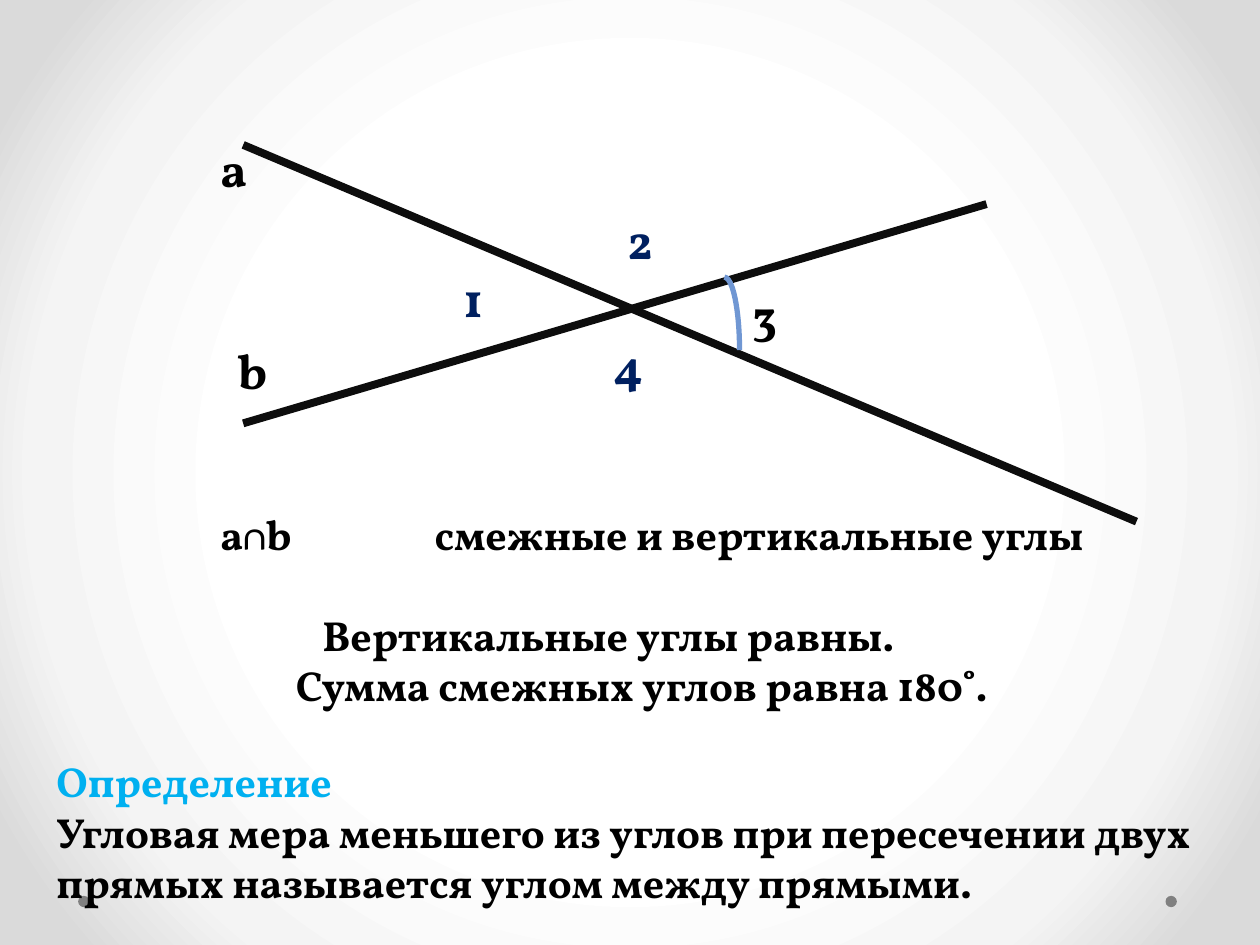
from dataclasses import dataclass

from lxml import etree
from pptx import Presentation
from pptx.dml.color import RGBColor
from pptx.enum import shapes, text
from pptx.oxml import parse_xml
from pptx.oxml.ns import nsdecls, qn
from pptx.util import Emu, Inches, Pt

FONT = "Vollkorn"
BLACK, NAVY, SKY, GRAY = "000000", "002060", "00B0F0", "808080"
BACKGROUND_STOPS = [(50, "FFFFFF"), (76, "F4F4F4"), (92, "DADADA")]


@dataclass
class Label:
    wording: str
    left: float
    top: float
    width: float
    color: str = BLACK


@dataclass
class Line:
    wording: str
    color: str = BLACK
    indent: float = 0
    before: float = 0
    tab: float = 0


def rgb(color: str) -> RGBColor:
    return RGBColor.from_string(color)


def paint_background(slide) -> None:
    stops = "".join(
        f'<a:gs pos="{pos * 1000}"><a:srgbClr val="{color}"/></a:gs>'
        for pos, color in BACKGROUND_STOPS
    )
    gradient = parse_xml(
        f'<a:gradFill {nsdecls("a")} rotWithShape="1"><a:gsLst>{stops}</a:gsLst>'
        '<a:path path="circle"><a:fillToRect l="50000" t="50000" r="50000" b="50000"/>'
        "</a:path></a:gradFill>"
    )
    slide.background.fill.solid()
    solid = next(slide.element.iter(qn("a:solidFill")))
    solid.getparent().replace(solid, gradient)


def add_dot(slide, left: float) -> None:
    dot = slide.shapes.add_shape(
        shapes.MSO_SHAPE.OVAL, Inches(left), Inches(7.11), Inches(0.09), Inches(0.09))
    dot.shadow.inherit = False
    dot.fill.solid()
    dot.fill.fore_color.rgb = rgb(GRAY)
    dot.line.fill.background()


def add_straight(slide, start: tuple[float, float], end: tuple[float, float]) -> None:
    straight = slide.shapes.add_connector(
        shapes.MSO_CONNECTOR.STRAIGHT, *map(Inches, start + end))
    straight.line.color.rgb = rgb("0D0D0D")
    straight.line.width = Pt(4.5)
    etree.SubElement(straight.element.spPr, qn("a:effectLst"))


def add_text(slide, box: tuple[float, float, float, float],
             lines: list[Line], size: float) -> None:
    frame = slide.shapes.add_textbox(*map(Inches, box)).text_frame
    frame.word_wrap = True
    frame.auto_size = text.MSO_AUTO_SIZE.SHAPE_TO_FIT_TEXT
    for index, line in enumerate(lines):
        paragraph = frame.add_paragraph() if index else frame.paragraphs[0]
        paragraph.space_before = Pt(line.before)
        properties = paragraph._p.get_or_add_pPr()
        properties.set("marL", str(Emu(Inches(line.indent))))
        if line.tab:
            tabs = etree.SubElement(properties, qn("a:tabLst"))
            etree.SubElement(tabs, qn("a:tab"), pos=str(Inches(line.tab)), algn="l")
        run = paragraph.add_run()
        run.text = line.wording
        run.font.color.rgb = rgb(line.color)
        for name, value in {"name": FONT, "size": Pt(size), "bold": True}.items():
            setattr(run.font, name, value)


def add_angle_arc(slide) -> None:
    arc = slide.shapes.add_shape(
        shapes.MSO_SHAPE.ARC, Inches(5.63), Inches(2.2), Inches(0.24), Inches(1.16))
    arc.shadow.inherit = False
    arc.fill.background()
    arc.line.color.rgb = rgb("7097D3")
    arc.line.width = Pt(3)


LABELS = [
    # Names of the lines
    Label("а", 1.65, 1.05, 0.55),
    Label("b", 1.79, 2.65, 0.28),
    # Numbers of the angles
    Label("1", 3.58, 2.08, 0.47, NAVY),
    Label("2", 4.88, 1.62, 0.31, NAVY),
    Label("3", 5.87, 2.22, 0.39),
    Label("4", 4.77, 2.61, 0.24, NAVY),
]
PROPERTIES = [
    Line("a∩b\tсмежные и вертикальные углы", indent=0.67, tab=1.7),
    Line("Вертикальные углы равны.", indent=1.48, before=28.6),
    Line("Сумма смежных углов равна 180˚.", indent=1.27),
]
DEFINITION = [
    Line("Определение", SKY),
    Line("Угловая мера меньшего из углов при пересечении двух прямых "
         "называется углом между прямыми."),
]


def main() -> None:
    deck = Presentation()
    deck.slide_width, deck.slide_height = Inches(10), Inches(7.5)
    slide = deck.slides.add_slide(deck.slide_layouts[6])

    # Backdrop
    paint_background(slide)
    for left in (9.25, 0.62):
        add_dot(slide, left)

    # Crossing lines with their labels
    add_straight(slide, (1.93, 3.36), (7.83, 1.62))
    add_straight(slide, (1.93, 1.15), (9.02, 4.14))
    for label in LABELS:
        add_text(slide, (label.left, label.top, label.width, 0.57),
                 [Line(label.wording, label.color)], 28)

    # Properties and definition
    add_text(slide, (0.98, 3.99, 8.58, 1.72), PROPERTIES, 24)
    add_text(slide, (0.35, 5.95, 9.37, 1.31), DEFINITION, 24)
    add_angle_arc(slide)

    deck.save("out.pptx")


if __name__ == "__main__":
    main()
